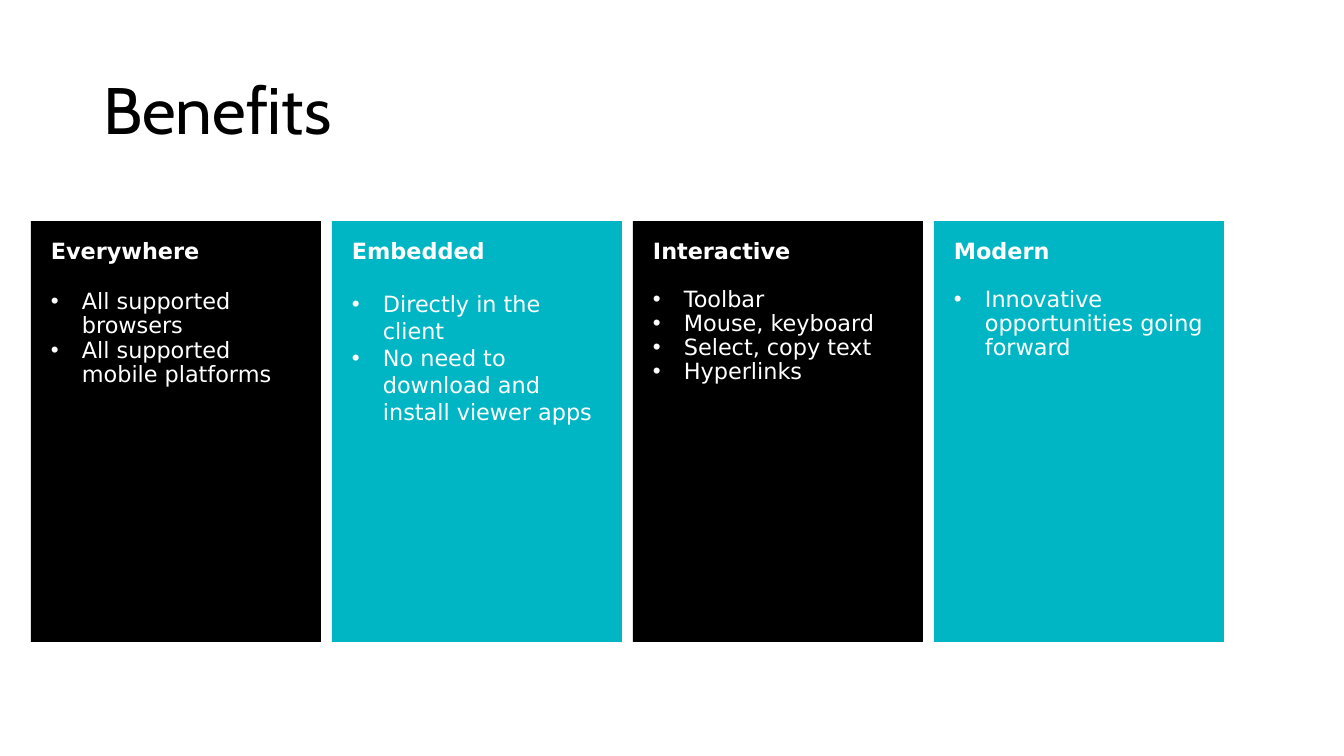
from dataclasses import dataclass

from lxml.etree import SubElement
from pptx import Presentation
from pptx.dml.color import RGBColor
from pptx.enum.shapes import MSO_SHAPE
from pptx.enum.text import MSO_ANCHOR, MSO_AUTO_SIZE, PP_ALIGN
from pptx.oxml.ns import qn
from pptx.util import Pt

PX = 914400 / 100.8


def px(n):
    return round(n * PX)


def set_all(obj, values):
    for name, value in values.items():
        setattr(obj, name, value)


@dataclass(frozen=True)
class Theme:
    black: str = "000000"
    teal: str = "00B6C4"
    white: str = "FFFFFF"
    title_font: str = "Cabin"
    body_font: str = "DejaVu Sans"
    title_size: float = 46.9
    body_size: float = 16


class Deck:
    def __init__(self, theme, width, height):
        self.theme = theme
        self.prs = Presentation()
        set_all(self.prs, {"slide_width": px(width), "slide_height": px(height)})

    def add_slide(self):
        self.s = self.prs.slides.add_slide(self.prs.slide_layouts[5])

    def add_text(self, p, text, font, size, color, bold=False):
        r = p.add_run()
        r.text = text
        set_all(r.font, {"name": font, "size": Pt(size), "bold": bold})
        r.font.color.rgb = RGBColor.from_string(color)

    def title(self, text, left, top, width, height):
        sp = self.s.shapes.title
        set_all(sp, {"left": px(left), "top": px(top),
                     "width": px(width), "height": px(height)})
        tf = sp.text_frame
        set_all(tf, {"word_wrap": True, "auto_size": MSO_AUTO_SIZE.NONE,
                     "vertical_anchor": MSO_ANCHOR.MIDDLE})
        p = tf.paragraphs[0]
        set_all(p, {"alignment": PP_ALIGN.LEFT, "line_spacing": 0.9})
        t = self.theme
        self.add_text(p, text, t.title_font, t.title_size, t.black)

    def bullet(self, p, indent):
        pPr = p._p.get_or_add_pPr()
        pPr.set("marL", str(px(indent)))
        pPr.set("indent", str(-px(indent)))
        SubElement(pPr, qn("a:buFont"), typeface="Arial")
        SubElement(pPr, qn("a:buChar"), char="•")

    def card(self, box, fill, heading, items, spacing, gap):
        """Draw a filled panel; gap is the space in points below its heading."""
        t = self.theme
        sp = self.s.shapes.add_shape(MSO_SHAPE.RECTANGLE, *map(px, box))
        sp.shadow.inherit = False
        sp.fill.solid()
        sp.fill.fore_color.rgb = RGBColor.from_string(fill)
        sp.line.fill.background()
        tf = sp.text_frame
        set_all(tf, {"word_wrap": True, "vertical_anchor": MSO_ANCHOR.TOP,
                     "margin_left": px(20), "margin_right": px(20),
                     "margin_top": px(16), "margin_bottom": px(16)})
        p = tf.paragraphs[0]
        p.alignment = PP_ALIGN.LEFT
        self.add_text(p, heading, t.body_font, t.body_size, t.white, bold=True)
        for i, item in enumerate(items):
            p = tf.add_paragraph()
            self.bullet(p, 31)
            set_all(p, {"alignment": PP_ALIGN.LEFT, "line_spacing": spacing,
                        "space_before": Pt(0 if i else gap)})
            self.add_text(p, item, t.body_font, t.body_size, t.white)


def main():
    theme = Theme()
    deck = Deck(theme, 1344, 756)
    deck.add_slide()
    deck.title("Benefits", 93, 40, 1159, 146)

    benefits = [
        ("Everywhere", ["All supported browsers",
                        "All supported mobile platforms"], 0.9, 19),
        ("Embedded", ["Directly in the client",
                      "No need to download and install viewer apps"], 1.0, 19),
        ("Interactive", ["Toolbar", "Mouse, keyboard",
                         "Select, copy text", "Hyperlinks"], 0.9, 17),
        ("Modern", ["Innovative opportunities going forward"], 0.9, 17),
    ]
    left, top, width, height, gutter = 31, 221, 290, 421, 11
    for i, benefit in enumerate(benefits):
        box = (left + i * (width + gutter), top, width, height)
        deck.card(box, (theme.black, theme.teal)[i % 2], *benefit)

    deck.prs.save("out.pptx")


if __name__ == "__main__":
    main()
